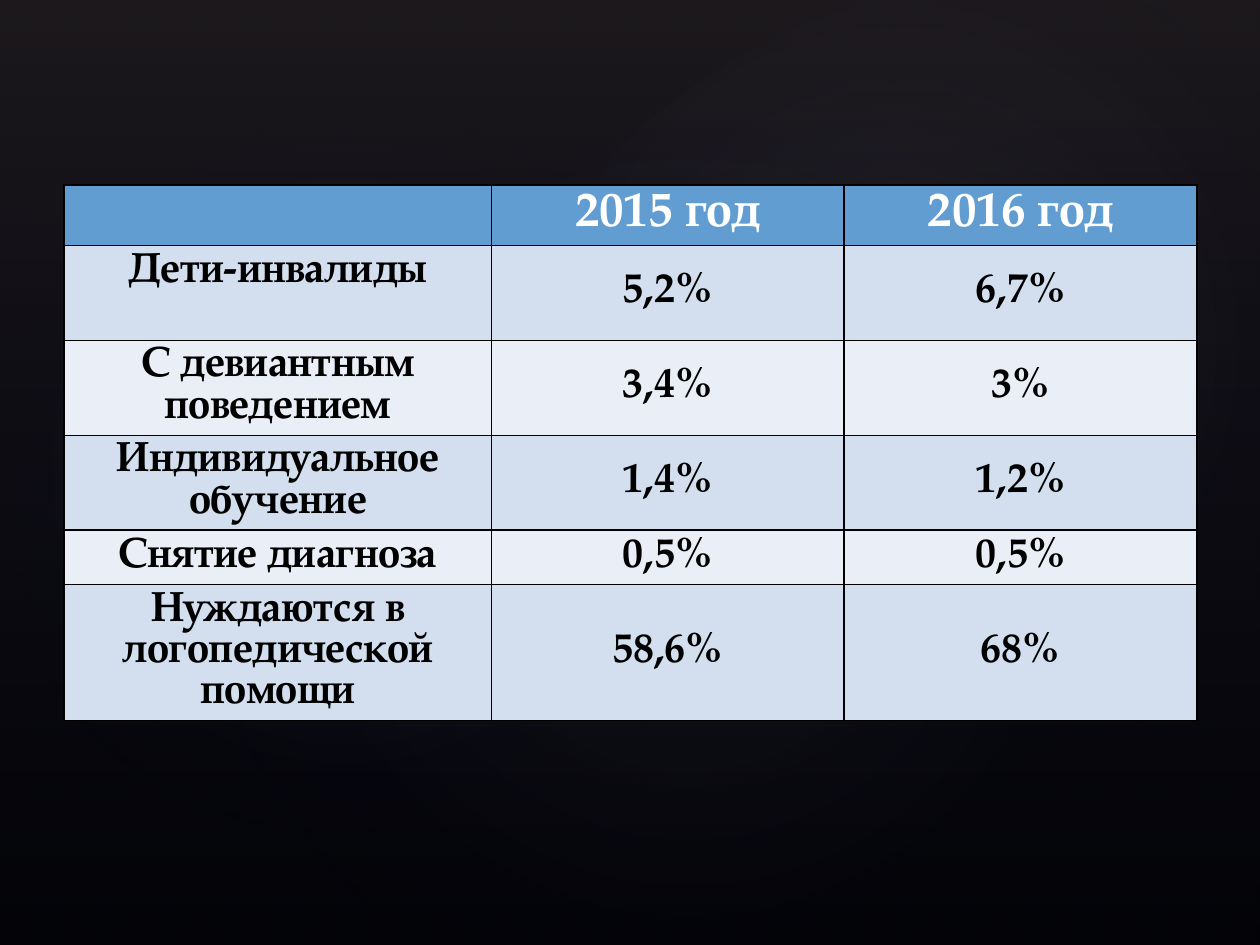
from lxml import etree
from pptx import Presentation
from pptx import util as u
from pptx.dml.color import RGBColor
from pptx.enum import shapes, text
from pptx.oxml import ns

BLACK = RGBColor(0x00, 0x00, 0x00)
WHITE = RGBColor(0xFF, 0xFF, 0xFF)
HEADER_BLUE = RGBColor(0x62, 0x9D, 0xD1)
BAND_DARK = RGBColor(0xD3, 0xDF, 0xEE)
BAND_LIGHT = RGBColor(0xEA, 0xEF, 0xF7)
PLUM = RGBColor(0x50, 0x46, 0x52)
NAVY = RGBColor(0x24, 0x28, 0x52)
MIST = RGBColor(0xC4, 0xBC, 0xC6)

HEADER = {"size": u.Pt(28), "color": WHITE}
BODY = {"size": u.Pt(24), "color": BLACK}


def add_element(parent, tag, **attributes):
    return etree.SubElement(parent, ns.qn(tag), {k: str(v) for k, v in attributes.items()})


class SlideBuilder:
    font_name = "TeX Gyre Pagella"
    line_spacing = 1.0

    def __init__(self, slide):
        self.slide = slide

    def background(self, color):
        fill = self.slide.background.fill
        fill.solid()
        fill.fore_color.rgb = color

    def glow(self, kind, box, stops, rotation=0, radial=False):
        """Shape with a translucent gradient; stops are (position %, colour, opacity %)."""
        glow = self.slide.shapes.add_shape(kind, *map(u.Inches, box))
        glow.rotation = rotation
        glow.shadow.inherit = False
        glow.line.fill.background()
        glow.fill.gradient()
        gradient = glow.fill._xPr.find(ns.qn("a:gradFill"))
        for child in list(gradient):
            gradient.remove(child)
        stop_list = add_element(gradient, "a:gsLst")
        for position, color, opacity in stops:
            stop = add_element(stop_list, "a:gs", pos=position * 1000)
            tint = add_element(stop, "a:srgbClr", val=color)
            add_element(tint, "a:alpha", val=opacity * 1000)
        if radial:
            centre = add_element(gradient, "a:path", path="circle")
            add_element(centre, "a:fillToRect", l=50000, t=50000, r=50000, b=50000)
        else:
            add_element(gradient, "a:lin", ang=90 * 60000, scaled=0)

    def borders(self, cell, color, width):
        properties = cell._tc.get_or_add_tcPr()
        for index, side in enumerate(("a:lnL", "a:lnR", "a:lnT", "a:lnB")):
            line = etree.Element(ns.qn(side), w=str(u.Pt(width)))
            add_element(add_element(line, "a:solidFill"), "a:srgbClr", val=str(color))
            properties.insert(index, line)

    def cell(self, cell, words, fill, style, anchor):
        cell.fill.solid()
        cell.fill.fore_color.rgb = fill
        cell.vertical_anchor = anchor
        self.borders(cell, BLACK, 1)
        paragraph = cell.text_frame.paragraphs[0]
        layout = {"alignment": text.PP_ALIGN.CENTER, "line_spacing": self.line_spacing}
        for name, value in layout.items():
            setattr(paragraph, name, value)
        if words:
            paragraph.text = words
        font_format = {"name": self.font_name, "size": style["size"], "bold": True}
        for name, value in font_format.items():
            setattr(paragraph.font, name, value)
        paragraph.font.color.rgb = style["color"]

    def table(self, left, top, widths, heights, rows):
        frame = self.slide.shapes.add_table(
            len(rows), len(widths), u.Inches(left), u.Inches(top),
            u.Inches(sum(widths)), u.Inches(sum(heights)))
        table = frame.table
        for column, width in zip(table.columns, widths):
            column.width = u.Inches(width)
        for r, (height, row) in enumerate(zip(heights, rows)):
            table.rows[r].height = u.Inches(height)
            fill = HEADER_BLUE if r == 0 else (BAND_LIGHT, BAND_DARK)[r % 2]
            for c, words in enumerate(row):
                # The header and the first category sit at the top of their cells
                at_top = r == 0 or (r, c) == (1, 0)
                anchor = text.MSO_ANCHOR.TOP if at_top else text.MSO_ANCHOR.MIDDLE
                self.cell(table.cell(r, c), words, fill, BODY if r else HEADER, anchor)


def main():
    deck = Presentation()
    deck.slide_width, deck.slide_height = u.Inches(10), u.Inches(7.5)
    page = SlideBuilder(deck.slides.add_slide(deck.slide_layouts[6]))

    # Dark backdrop with soft glows
    page.background(BLACK)
    page.glow(shapes.MSO_SHAPE.RECTANGLE, (0, 0, 10, 7.5), [(0, PLUM, 36), (100, NAVY, 10)])
    glows = [
        ((1.5, 1.14, 7.92, 6.24), 328.7, 7),
        ((-0.3, 1.28, 6.06, 4.9), 294.3, 8),
        ((3.58, 0.13, 7.09, 5.2), 328.7, 8),
    ]
    for box, rotation, opacity in glows:
        page.glow(shapes.MSO_SHAPE.OVAL, box, [(0, MIST, opacity), (58, NAVY, 0)],
                  rotation, radial=True)

    # Shares of pupils by category and year
    page.table(0.51, 1.47, [3.39, 2.8, 2.8], [0.48, 0.75, 0.75, 0.75, 0.43, 1.08], [
        ("", "2015 год", "2016 год"),
        ("Дети-инвалиды", "5,2%", "6,7%"),
        ("С девиантным поведением", "3,4%", "3%"),
        ("Индивидуальное обучение", "1,4%", "1,2%"),
        ("Снятие диагноза", "0,5%", "0,5%"),
        ("Нуждаются в логопедической помощи", "58,6%", "68%"),
    ])

    deck.save("out.pptx")


if __name__ == "__main__":
    main()
